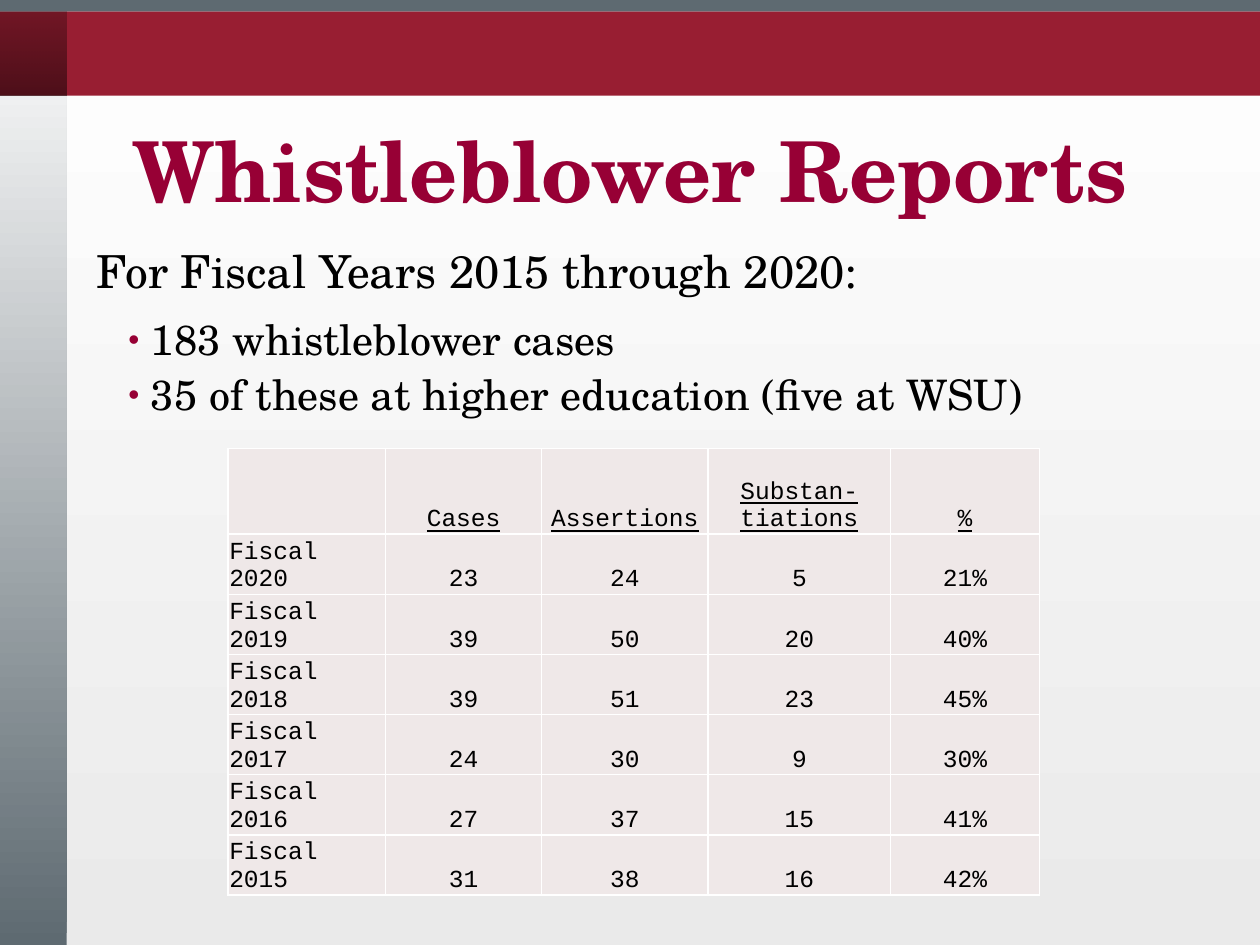
from lxml.etree import SubElement
from pptx import Presentation
from pptx.dml.color import RGBColor
from pptx.enum.shapes import MSO_SHAPE
from pptx.enum.text import MSO_ANCHOR, PP_ALIGN
from pptx.oxml.ns import qn
from pptx.util import Inches, Pt

BLACK = RGBColor(0x00, 0x00, 0x00)
WHITE = RGBColor(0xFF, 0xFF, 0xFF)
PALE = RGBColor(0xEA, 0xEA, 0xEA)
SLATE = RGBColor(0x5E, 0x6A, 0x71)
CRIMSON = RGBColor(0x98, 0x1E, 0x32)
MAROON = RGBColor(0x97, 0x00, 0x35)
CELL = RGBColor(0xEF, 0xE8, 0xE8)
SERIF = "TeX Gyre Schola"
MONO = "Courier New"

COL_WIDTHS = [1.25, 1.24, 1.32, 1.45, 1.18]
HEADER_HEIGHT, ROW_HEIGHT = 0.68, 0.45
HEADERS = ["", "Cases", "Assertions", "Substan- tiations", "%"]
REPORTS = [
    ("Fiscal 2020", 23, 24, 5, "21%"),
    ("Fiscal 2019", 39, 50, 20, "40%"),
    ("Fiscal 2018", 39, 51, 23, "45%"),
    ("Fiscal 2017", 24, 30, 9, "30%"),
    ("Fiscal 2016", 27, 37, 15, "41%"),
    ("Fiscal 2015", 31, 38, 16, "42%"),
]


def set_gradient(fill, bottom, top):
    fill.gradient()
    fill.gradient_angle = 90
    for stop, color in zip(fill.gradient_stops, (bottom, top)):
        stop.color.rgb = color


def add_band(s, x, y, w, h, color, top=None, alphas=()):
    sp = s.shapes.add_shape(MSO_SHAPE.RECTANGLE, Inches(x), Inches(y), Inches(w), Inches(h))
    sp.shadow.inherit = False
    if top is None:
        sp.fill.solid()
        sp.fill.fore_color.rgb = color
    else:
        set_gradient(sp.fill, color, top)
    sp.line.fill.background()
    stops = sp._element.spPr.iter(qn("a:srgbClr"))
    for clr, alpha in zip(stops, alphas):
        SubElement(clr, qn("a:alpha"), val=str(alpha * 1000))


def format_runs(p, font, size, color, bold=False, underline=False):
    for r in p.runs:
        r.font.name = font
        r.font.size = Pt(size)
        r.font.color.rgb = color
        r.font.bold = bold
        r.font.underline = underline


def add_text_box(s, x, y, w, h):
    tf = s.shapes.add_textbox(Inches(x), Inches(y), Inches(w), Inches(h)).text_frame
    tf.word_wrap = True
    return tf


def add_title(s, text):
    tf = add_text_box(s, 0, 0.95, 10, 0.85)
    tf.margin_left = tf.margin_right = Inches(0.5)
    tf.vertical_anchor = MSO_ANCHOR.BOTTOM
    p = tf.paragraphs[0]
    p.text = text
    p.alignment = PP_ALIGN.CENTER
    p.line_spacing = 0.9
    format_runs(p, SERIF, 48, MAROON, bold=True)


def set_indent(p, left, first):
    pPr = p._p.get_or_add_pPr()
    pPr.set("marL", str(Inches(left)))
    pPr.set("indent", str(Inches(first)))
    return pPr


def add_bullet(tf, text, space_before):
    p = tf.add_paragraph()
    p.text = text
    p.level = 1
    p.line_spacing = 0.95
    p.space_before = Pt(space_before)
    pPr = set_indent(p, 0.56, -0.18)
    clr = SubElement(pPr, qn("a:buClr"))
    SubElement(clr, qn("a:srgbClr"), val=str(MAROON))
    SubElement(pPr, qn("a:buSzPct"), val="75000")
    SubElement(pPr, qn("a:buFont"), typeface="Arial")
    SubElement(pPr, qn("a:buChar"), char="•")
    format_runs(p, SERIF, 24, BLACK)


def add_body(s):
    tf = add_text_box(s, 0.54, 1.88, 9.46, 4.45)
    p = tf.paragraphs[0]
    p.text = "For Fiscal Years 2015 through 2020:"
    set_indent(p, 0.13, 0)
    format_runs(p, SERIF, 26, BLACK)
    add_bullet(tf, "183 whistleblower cases", 11)
    add_bullet(tf, "35 of these at higher education (five at WSU)", 4)


def set_borders(cell):
    tcPr = cell._tc.get_or_add_tcPr()
    for i, side in enumerate(("lnL", "lnR", "lnT", "lnB")):
        ln = tcPr.makeelement(qn(f"a:{side}"), {"w": str(Pt(1))})
        fill = SubElement(ln, qn("a:solidFill"))
        SubElement(fill, qn("a:srgbClr"), val=str(WHITE))
        tcPr.insert(i, ln)


def format_cell(cell, text, centered, underline):
    cell.margin_left = cell.margin_right = cell.margin_top = Inches(0.01)
    cell.margin_bottom = 0
    cell.vertical_anchor = MSO_ANCHOR.BOTTOM
    cell.fill.solid()
    cell.fill.fore_color.rgb = CELL
    set_borders(cell)
    p = cell.text_frame.paragraphs[0]
    p.text = text
    p.alignment = PP_ALIGN.CENTER if centered else PP_ALIGN.LEFT
    format_runs(p, MONO, 14, BLACK, underline=underline)


def add_report_table(s):
    rows = [HEADERS, *REPORTS]
    height = HEADER_HEIGHT + ROW_HEIGHT * len(REPORTS)
    table = s.shapes.add_table(len(rows), len(HEADERS), Inches(1.81), Inches(3.56),
                               Inches(sum(COL_WIDTHS)), Inches(height)).table
    table.first_row = table.horz_banding = False
    for column, width in zip(table.columns, COL_WIDTHS):
        column.width = Inches(width)
    for i, values in enumerate(rows):
        table.rows[i].height = Inches(ROW_HEIGHT if i else HEADER_HEIGHT)
        for j, value in enumerate(values):
            format_cell(table.cell(i, j), str(value), centered=j > 0, underline=i == 0)


def main():
    prs = Presentation()
    prs.slide_width, prs.slide_height = Inches(10), Inches(7.5)
    s = prs.slides.add_slide(prs.slide_layouts[6])
    set_gradient(s.background.fill, PALE, WHITE)
    add_band(s, 0, 0, 0.53, 7.5, SLATE, WHITE)
    add_band(s, 0, 0.09, 10, 0.67, CRIMSON)
    add_band(s, -0.02, 0.09, 0.55, 0.67, BLACK, BLACK, (50, 25))
    add_band(s, -0.02, 0, 10.02, 0.09, SLATE)
    add_title(s, "Whistleblower Reports")
    add_body(s)
    add_report_table(s)
    prs.save("out.pptx")


if __name__ == "__main__":
    main()
